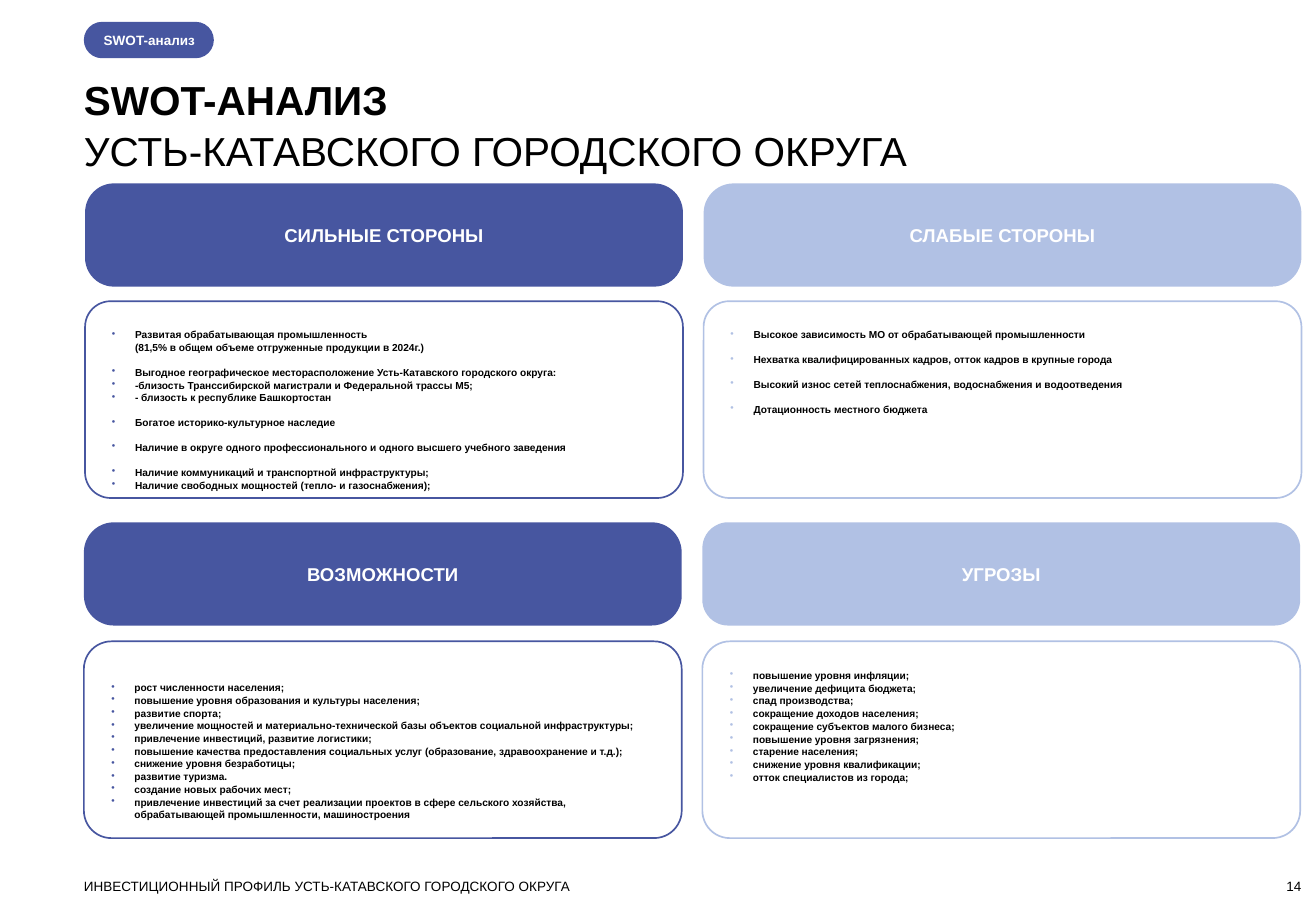
from copy import deepcopy
from pptx import Presentation
from pptx.dml.color import RGBColor
from pptx.enum import shapes, text
from pptx.oxml import ns, xmlchemy as xml
from pptx.util import Inches, Pt

BLUE = RGBColor(0x47, 0x56, 0xA0)
PALE = RGBColor(0xB1, 0xC1, 0xE4)
BLACK = RGBColor(0, 0, 0)
WHITE = RGBColor(255, 255, 255)

TAG = "SWOT-анализ"
TITLE = ["SWOT-АНАЛИЗ", "УСТЬ-КАТАВСКОГО ГОРОДСКОГО ОКРУГА"]
FOOTER = "ИНВЕСТИЦИОННЫЙ ПРОФИЛЬ УСТЬ-КАТАВСКОГО ГОРОДСКОГО ОКРУГА"
PAGE = "14"

# heading, colour, heading radius, body top inset, groups of points set apart by a gap
CARDS = [
    ("СИЛЬНЫЕ СТОРОНЫ", BLUE, 0.28, 0.16, [
        ["Развитая обрабатывающая промышленность\v"
         "(81,5% в общем объеме отгруженные продукции в 2024г.)"],
        ["Выгодное географическое месторасположение Усть-Катавского городского округа:",
         "-близость Транссибирской магистрали и Федеральной трассы М5;",
         "- близость к республике Башкортостан"],
        ["Богатое историко-культурное наследие"],
        ["Наличие в округе одного профессионального и одного высшего учебного заведения"],
        ["Наличие коммуникаций и транспортной инфраструктуры;",
         "Наличие свободных мощностей (тепло- и газоснабжения);"],
    ]),
    ("СЛАБЫЕ СТОРОНЫ", PALE, 0.29, 0.16, [
        ["Высокое зависимость МО от обрабатывающей промышленности"],
        ["Нехватка квалифицированных кадров, отток кадров в крупные города"],
        ["Высокий износ сетей теплоснабжения, водоснабжения и водоотведения"],
        ["Дотационность местного бюджета"],
    ]),
    ("ВОЗМОЖНОСТИ", BLUE, 0.29, 0.26, [
        ["рост численности населения;",
         "повышение уровня образования и культуры населения;",
         "развитие спорта;",
         "увеличение мощностей и материально-технической базы объектов социальной инфраструктуры;",
         "привлечение инвестиций, развитие логистики;",
         "повышение качества предоставления социальных услуг (образование, здравоохранение и т.д.);",
         "снижение уровня безработицы;",
         "развитие туризма.",
         "создание новых рабочих мест;",
         "привлечение инвестиций за счет реализации проектов в сфере сельского хозяйства, "
         "обрабатывающей промышленности, машиностроения"],
    ]),
    ("УГРОЗЫ", PALE, 0.25, 0.16, [
        ["повышение уровня инфляции;",
         "увеличение дефицита бюджета;",
         "спад производства;",
         "сокращение доходов населения;",
         "сокращение субъектов малого бизнеса;",
         "повышение уровня загрязнения;",
         "старение населения;",
         "снижение уровня квалификации;",
         "отток специалистов из города;"],
    ]),
]

# left, heading top, body top, body radius of each row
ROWS = [(0.7, 1.51, 2.48, 0.13), (0.69, 4.3, 5.28, 0.14)]
STEP, WIDTH, HEAD, BODY = 5.09, 4.92, 0.85, 1.62

prs = Presentation()
prs.slide_width, prs.slide_height = Inches(10.83), Inches(7.5)
slide = prs.slides.add_slide(prs.slide_layouts[6])


def inset(frame, left, top, right, low):
    frame.margin_left, frame.margin_top = Inches(left), Inches(top)
    frame.margin_right, frame.margin_bottom = Inches(right), Inches(low)


def style(para, size, color, bold=False, align=text.PP_ALIGN.LEFT):
    para.alignment = align
    for run in para.runs:
        font = run.font
        font.name, font.size, font.bold = "Arial", Pt(size), bold
        font.color.rgb = color
    for gap in para._p.findall(ns.qn("a:br")):
        gap.append(deepcopy(para.runs[0]._r.rPr))


def panel(box, radius, fill=None, line=None):
    """Rounded box, filled or outlined; returns its text frame."""
    shape = slide.shapes.add_shape(
        shapes.MSO_SHAPE.ROUNDED_RECTANGLE, *map(Inches, box))
    shape.adjustments[0] = radius
    shape.shadow.inherit = False
    if fill is None:
        shape.fill.background()
    else:
        shape.fill.solid()
        shape.fill.fore_color.rgb = fill
    if line is None:
        shape.line.fill.background()
    else:
        shape.line.color.rgb = line
        shape.line.width = Pt(1)
    return shape.text_frame


def label(box, words, anchor=text.MSO_ANCHOR.TOP):
    """Text box without margins; returns its paragraphs."""
    frame = slide.shapes.add_textbox(*map(Inches, box)).text_frame
    frame.word_wrap = True
    frame.vertical_anchor = anchor
    inset(frame, 0, 0, 0, 0)
    frame.text = words
    return frame.paragraphs


def bullet(para, color):
    props = para._p.get_or_add_pPr()
    props.set("marL", str(Inches(0.19)))
    props.set("indent", str(-Inches(0.19)))
    tint = xml.OxmlElement("a:buClr")
    rgb = xml.OxmlElement("a:srgbClr")
    rgb.set("val", str(color))
    tint.append(rgb)
    mark = xml.OxmlElement("a:buChar")
    mark.set("char", "•")
    props.extend([tint, mark])


def points(frame, groups, color):
    frame.text = "\n".join(item for group in groups for item in group)
    paras = iter(frame.paragraphs)
    for g, group in enumerate(groups):
        for i in range(len(group)):
            para = next(paras)
            bullet(para, color)
            para.line_spacing = 1.05
            if g and i == 0:
                para.space_before = Pt(7.2)
            style(para, 6, BLACK, True)


for n, (name, color, radius, top, groups) in enumerate(CARDS):
    row, col = divmod(n, 2)
    left, head, body, curve = ROWS[row]
    left += col * STEP
    frame = panel((left, body, WIDTH, BODY), curve, line=color)
    frame.vertical_anchor = text.MSO_ANCHOR.TOP
    inset(frame, 0.16, top, 0.1 if col else 0.16, 0.05)
    points(frame, groups, color)
    frame = panel((left, head, WIDTH, HEAD), radius, fill=color)
    frame.text = name
    style(frame.paragraphs[0], 11, WHITE, True, text.PP_ALIGN.CENTER)

frame = panel((0.69, 0.18, 1.07, 0.3), 0.5, fill=BLUE)
inset(frame, 0.12, 0, 0, 0)
frame.text = TAG
style(frame.paragraphs[0], 8, WHITE, True)

for n, para in enumerate(label((0.69, 0.6, 10.02, 0.81), "\n".join(TITLE))):
    para.line_spacing = 1.05
    style(para, 24, BLACK, n == 0)

style(label((0.69, 7.23, 8, 0.13), FOOTER)[0], 8, BLACK)
style(label((9.91, 7.23, 0.8, 0.13), PAGE, text.MSO_ANCHOR.BOTTOM)[0],
      8, BLACK, align=text.PP_ALIGN.RIGHT)

prs.save("out.pptx")
